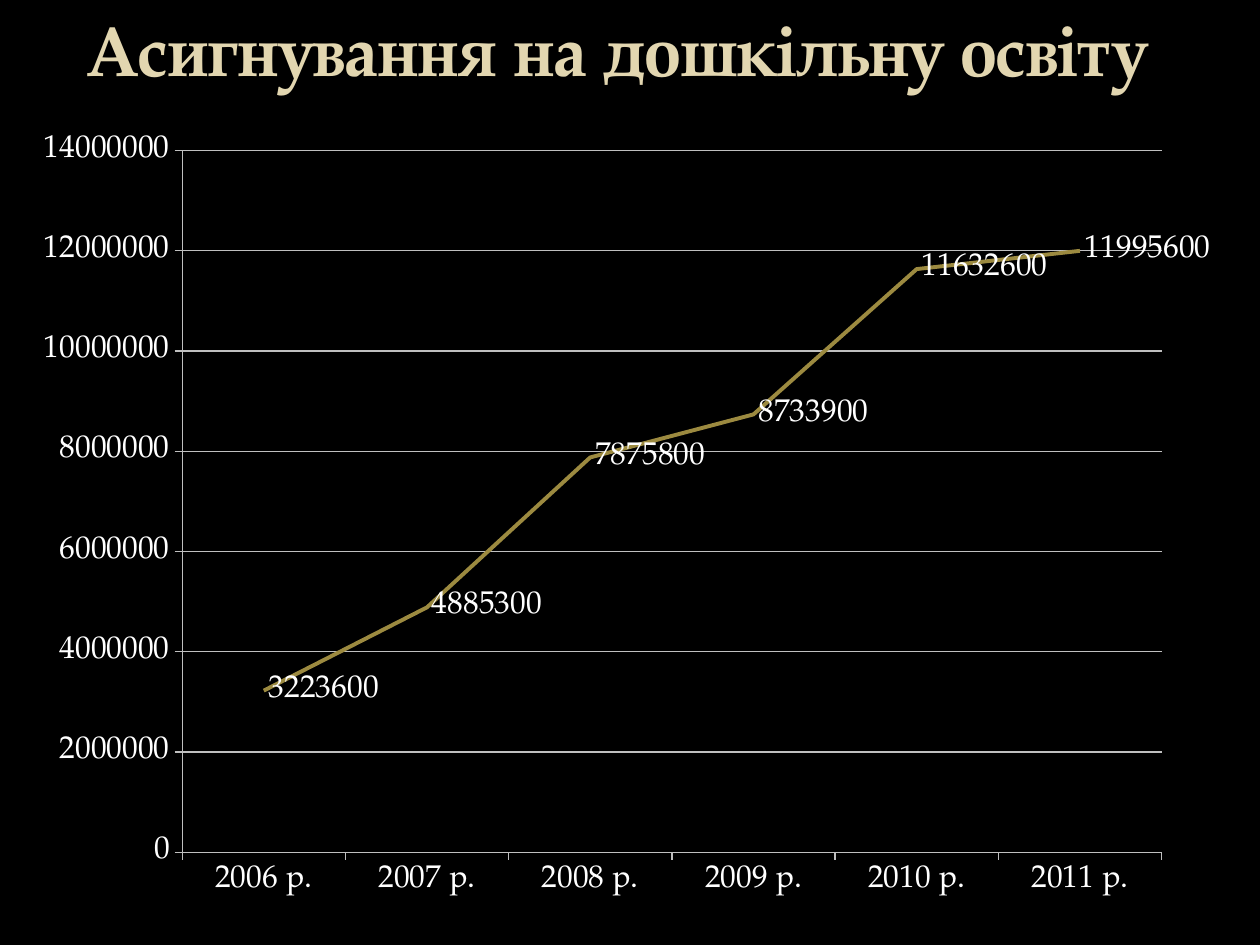
from lxml import etree
from pptx import Presentation
from pptx.chart.data import CategoryChartData
from pptx.dml.color import RGBColor
from pptx.enum.chart import XL_CHART_TYPE, XL_LABEL_POSITION, XL_MARKER_STYLE, XL_TICK_MARK
from pptx.enum.text import MSO_ANCHOR, MSO_AUTO_SIZE, PP_ALIGN
from pptx.oxml.ns import qn
from pptx.util import Cm, Pt

LINE_STACKED = XL_CHART_TYPE.LINE_STACKED
LABEL_RIGHT = XL_LABEL_POSITION.RIGHT
NO_MARKER = XL_MARKER_STYLE.NONE
TICK_OUTSIDE = XL_TICK_MARK.OUTSIDE
TITLE_ONLY = 5

BLACK = RGBColor(0x00, 0x00, 0x00)
WHITE = RGBColor(0xFF, 0xFF, 0xFF)
CREAM = RGBColor(0xE2, 0xD6, 0xB0)
GOLD = RGBColor(0x9C, 0x8A, 0x40)
GRID_GREY = RGBColor(0xBF, 0xBF, 0xBF)
FONT = "TeX Gyre Pagella"

FUNDING = {2006: 3223600, 2007: 4885300, 2008: 7875800,
           2009: 8733900, 2010: 11632600, 2011: 11995600}
PLOT_LAYOUT = {"x": 0.13, "y": 0.04, "w": 0.83, "h": 0.88}


def format_font(font, size, color, bold=False):
    font.name = FONT
    font.size = Pt(size)
    font.bold = bold
    font.color.rgb = color


def write_text(frame, text, align=PP_ALIGN.CENTER, **font_format):
    frame.text = text
    paragraph = frame.paragraphs[0]
    paragraph.alignment = align
    format_font(paragraph.runs[0].font, **font_format)


def place_title(slide, left, top, width, height):
    title = slide.shapes.title
    title.left, title.top, title.width, title.height = left, top, width, height
    frame = title.text_frame
    frame.word_wrap = True
    frame.auto_size = MSO_AUTO_SIZE.SHAPE_TO_FIT_TEXT
    frame.vertical_anchor = MSO_ANCHOR.TOP
    write_text(frame, "Асигнування на дошкільну освіту",
               size=40, color=CREAM, bold=True)


def set_plot_layout(chart):
    """Fix the inner plot area as fractions of the chart."""
    plot_area = chart.element.find(".//" + qn("c:plotArea"))
    for old_layout in plot_area.findall(qn("c:layout")):
        plot_area.remove(old_layout)
    layout = etree.Element(qn("c:layout"))
    manual = etree.SubElement(layout, qn("c:manualLayout"))
    settings = {"layoutTarget": "inner", "xMode": "edge", "yMode": "edge", **PLOT_LAYOUT}
    for tag, value in settings.items():
        etree.SubElement(manual, qn("c:" + tag)).set("val", str(value))
    plot_area.insert(0, layout)


def format_line(line, color, width):
    line.color.rgb = color
    line.width = Pt(width)


def place_funding_chart(slide, left, top, width, height):
    data = CategoryChartData(number_format="General")
    data.categories = [f"{year} р." for year in FUNDING]
    data.add_series("Series 1", FUNDING.values())
    chart = slide.shapes.add_chart(LINE_STACKED, left, top, width, height, data).chart
    chart.has_legend = False
    chart.has_title = False
    format_font(chart.font, size=18, color=WHITE)
    set_plot_layout(chart)

    for axis in (chart.category_axis, chart.value_axis):
        axis.major_tick_mark = TICK_OUTSIDE
        format_line(axis.format.line, GRID_GREY, 0.75)
    amounts = chart.value_axis
    amounts.minimum_scale = 0
    amounts.maximum_scale = 14000000
    amounts.major_unit = 2000000
    amounts.has_major_gridlines = True
    format_line(amounts.major_gridlines.format.line, GRID_GREY, 0.75)

    plot = chart.plots[0]
    plot.vary_by_categories = False
    funding = plot.series[0]
    funding.smooth = False
    funding.marker.style = NO_MARKER
    format_line(funding.format.line, GOLD, 2.25)
    labels = funding.data_labels
    labels.show_value = True
    labels.position = LABEL_RIGHT
    format_font(labels.font, size=18, color=WHITE)


def main():
    deck = Presentation()
    deck.slide_width, deck.slide_height = Cm(25.4), Cm(19.05)
    slide = deck.slides.add_slide(deck.slide_layouts[TITLE_ONLY])
    slide.background.fill.solid()
    slide.background.fill.fore_color.rgb = BLACK
    place_title(slide, Cm(0), Cm(0), Cm(24.9), Cm(1.96))
    place_funding_chart(slide, Cm(0.58), Cm(2.39), Cm(23.83), Cm(16.08))
    deck.save("out.pptx")


if __name__ == "__main__":
    main()
